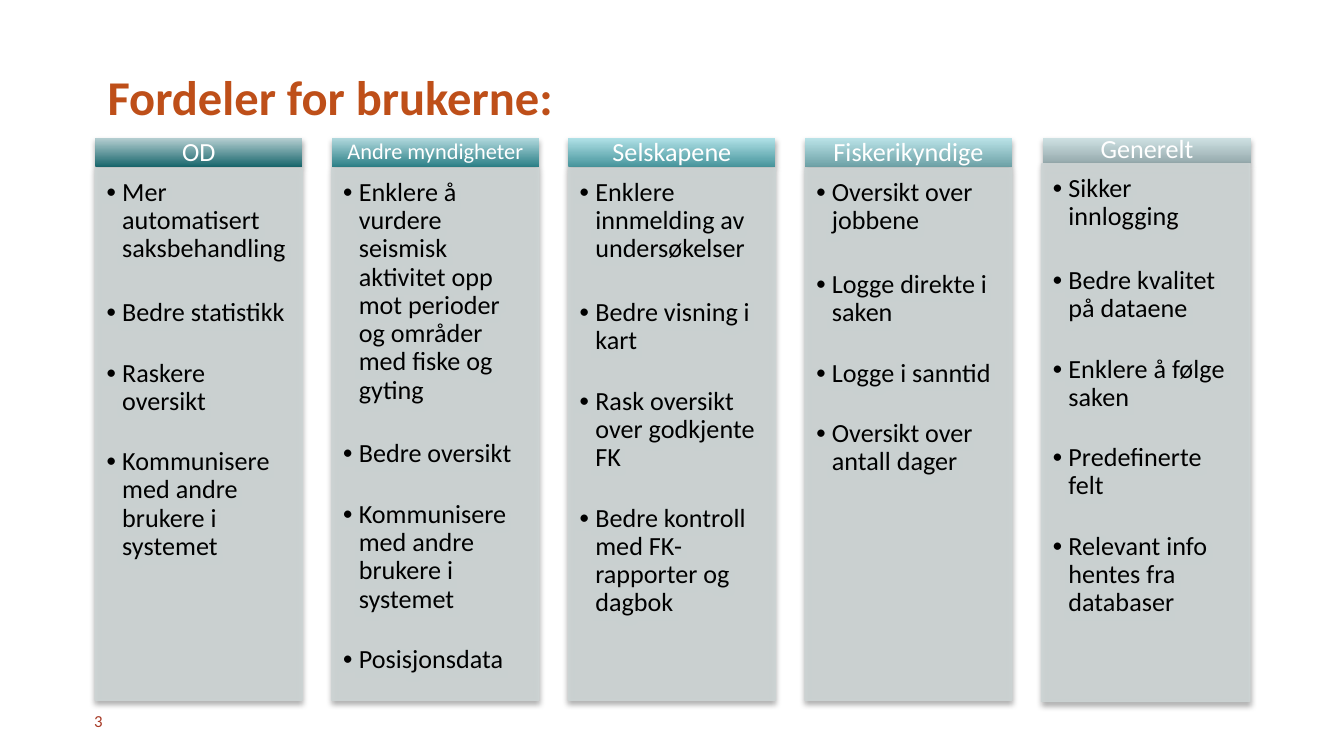
from dataclasses import dataclass

from lxml.etree import SubElement
from pptx import Presentation
from pptx.dml.color import RGBColor
from pptx.enum.shapes import MSO_SHAPE as Preset
from pptx.enum.text import MSO_ANCHOR as Anchor, MSO_AUTO_SIZE as AutoSize, PP_ALIGN as Align
from pptx.oxml.ns import qn
from pptx.util import Inches, Pt

FONT = "Calibri"
PANEL = "CDD4D4"
FIRST_LEFT, COLUMN_STEP = 0.71, 1.76


@dataclass
class Box:
    left: float
    top: float
    width: float
    height: float

    def lengths(self):
        return [Inches(v) for v in (self.left, self.top, self.width, self.height)]


@dataclass
class UserGroup:
    heading: str
    dark: str
    light: str
    benefits: list[str]
    heading_size: int = 14


def color(value: str) -> RGBColor:
    return RGBColor.from_string(value)


def set_frame(frame, insets: tuple, anchor) -> None:
    frame.word_wrap = True
    frame.auto_size = AutoSize.NONE
    frame.vertical_anchor = anchor
    frame.margin_left, frame.margin_top, frame.margin_right, frame.margin_bottom = map(Inches, insets)


def add_text(paragraph, text: str, size: int, rgb: str, bold: bool = False) -> None:
    run = paragraph.add_run()
    run.text = text
    run.font.name = FONT
    run.font.size = Pt(size)
    run.font.bold = bold
    run.font.color.rgb = color(rgb)


def add_shadow(shape) -> None:
    shape.shadow.inherit = False
    effects = shape._element.spPr.find(qn("a:effectLst"))
    shadow = SubElement(effects, qn("a:outerShdw"), blurRad=str(Pt(3.1)), dist=str(Pt(1.8)),
                        dir="5400000", rotWithShape="0")
    black = SubElement(shadow, qn("a:srgbClr"), val="000000")
    SubElement(black, qn("a:alpha"), val="35000")


def add_bullet(paragraph) -> None:
    properties = paragraph._p.get_or_add_pPr()
    properties.set("marL", str(Inches(0.12)))
    properties.set("indent", str(Inches(-0.12)))
    SubElement(properties, qn("a:buSzPct"), val="79000")
    SubElement(properties, qn("a:buFont"), typeface=FONT)
    SubElement(properties, qn("a:buChar"), char="•")


def add_heading(slide, box: Box, group: UserGroup) -> None:
    heading = slide.shapes.add_shape(Preset.RECTANGLE, *box.lengths())
    heading.fill.gradient()
    heading.fill.gradient_angle = 90
    for stop, rgb in zip(heading.fill.gradient_stops, (group.dark, group.light)):
        stop.color.rgb = color(rgb)
    heading.line.fill.background()
    add_shadow(heading)
    set_frame(heading.text_frame, (0.11, 0.06, 0.11, 0.06), Anchor.MIDDLE)
    paragraph = heading.text_frame.paragraphs[0]
    paragraph.alignment = Align.CENTER
    paragraph.line_spacing = 0.9
    add_text(paragraph, group.heading, group.heading_size, "FFFFFF")


def add_panel(slide, box: Box, benefits: list[str]) -> None:
    panel = slide.shapes.add_shape(Preset.RECTANGLE, *box.lengths())
    for fill in (panel.fill, panel.line.fill):
        fill.solid()
        fill.fore_color.rgb = color(PANEL)
    panel.line.width = Pt(0.75)
    for solid in panel._element.spPr.iter(qn("a:solidFill")):
        SubElement(solid[0], qn("a:alpha"), val="90000")
    add_shadow(panel)
    frame = panel.text_frame
    set_frame(frame, (0.08, 0.08, 0.11, 0.12), Anchor.TOP)
    for index, benefit in enumerate(benefits):
        paragraph = frame.add_paragraph() if index else frame.paragraphs[0]
        add_bullet(paragraph)
        paragraph.level = 1
        paragraph.alignment = Align.LEFT
        paragraph.line_spacing = 0.9
        paragraph.space_after = Pt(17.2 if index else 19.1)
        add_text(paragraph, benefit, 14, "000000")


GROUPS = [
    UserGroup("OD", "19676D", "B3CDD0", [
        "Mer automatisert saksbehandling", "Bedre statistikk", "Raskere oversikt",
        "Kommunisere med andre brukere i systemet"]),
    UserGroup("Andre myndigheter", "2D8188", "AFD7DC", [
        "Enklere å vurdere seismisk aktivitet opp mot perioder og områder med fiske og gyting",
        "Bedre oversikt", "Kommunisere med andre brukere i systemet", "Posisjonsdata"], 12),
    UserGroup("Selskapene", "48969D", "AFE0E6", [
        "Enklere innmelding av undersøkelser", "Bedre visning i kart",
        "Rask oversikt over godkjente FK", "Bedre kontroll med FK-rapporter og dagbok"]),
    UserGroup("Fiskerikyndige", "6EA2A7", "B9E2E7", [
        "Oversikt over jobbene", "Logge direkte i saken", "Logge i sanntid",
        "Oversikt over antall dager"]),
    UserGroup("Generelt", "97ABAE", "CDE0E2", [
        "Sikker innlogging", "Bedre kvalitet på dataene", "Enklere å følge saken",
        "Predefinerte felt", "Relevant info hentes fra databaser"]),
]


def main() -> None:
    deck = Presentation()
    deck.slide_width = Inches(10)
    deck.slide_height = deck.slide_width * 9 // 16
    slide = deck.slides.add_slide(deck.slide_layouts[5])

    title = slide.shapes.title
    title.left, title.top, title.width, title.height = Box(0.7, 0.24, 8.61, 0.74).lengths()
    set_frame(title.text_frame, (0.1, 0.05, 0.1, 0.05), Anchor.BOTTOM)
    title_line = title.text_frame.paragraphs[0]
    title_line.alignment = Align.LEFT
    title_line.line_spacing = Pt(30)
    add_text(title_line, "Fordeler for brukerne:", 26, "BE4F19", bold=True)

    for index, group in enumerate(GROUPS):
        left = FIRST_LEFT + index * COLUMN_STEP
        heading_box = Box(left, 1.03, 1.54, 0.21)
        panel_box = Box(left, 1.25, 1.54, 3.96)
        if group.heading == "Generelt":
            heading_box = Box(7.76, 1.03, 1.55, 0.18)
            panel_box = Box(7.75, 1.22, 1.55, 4)
        add_heading(slide, heading_box, group)
        add_panel(slide, panel_box, group.benefits)

    page_number = slide.shapes.add_textbox(*Box(0.7, 5.21, 0.39, 0.3).lengths())
    set_frame(page_number.text_frame, (0, 0.05, 0.1, 0.05), Anchor.MIDDLE)
    add_text(page_number.text_frame.paragraphs[0], "3", 9, "A73A26")

    deck.save("out.pptx")


if __name__ == "__main__":
    main()
